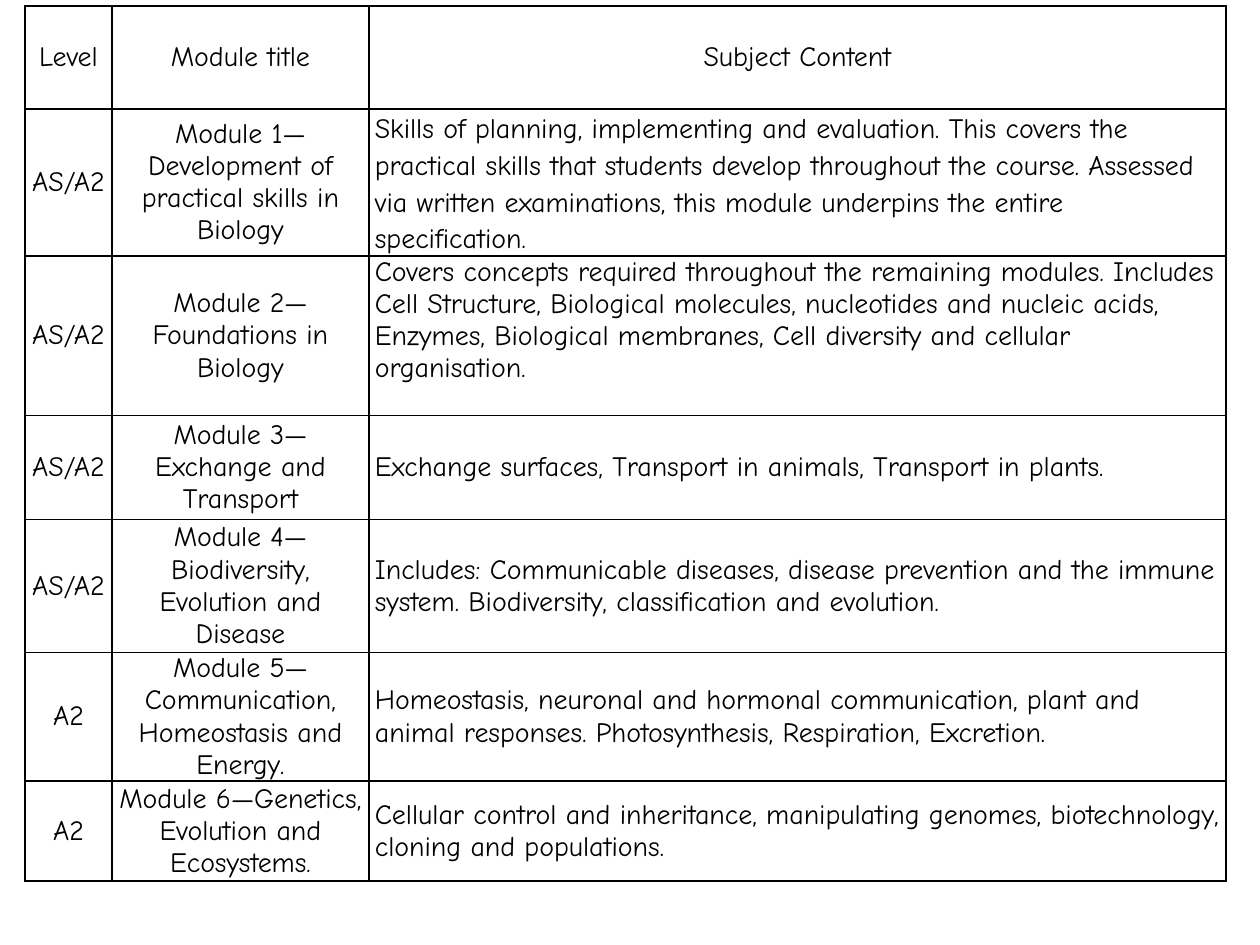
from dataclasses import dataclass

from lxml import etree
from pptx import Presentation
from pptx import util as u
from pptx.dml.color import RGBColor
from pptx.enum import text
from pptx.oxml import ns

# Content: level, module title, subject content
HEADINGS = ("Level", "Module title", "Subject Content")
MODULES = [
    ("AS/A2", "Module 1—Development of practical skills in Biology",
     "Skills of planning, implementing and evaluation. This covers the practical "
     "skills that students develop throughout the course. Assessed via written "
     "examinations, this module underpins the entire specification."),
    ("AS/A2", "Module 2—Foundations in Biology",
     "Covers concepts required throughout the remaining modules. Includes Cell "
     "Structure, Biological molecules, nucleotides and nucleic acids, Enzymes, "
     "Biological membranes, Cell diversity and cellular organisation."),
    ("AS/A2", "Module 3—Exchange and Transport",
     "Exchange surfaces, Transport in animals, Transport in plants."),
    ("AS/A2", "Module 4—Biodiversity, Evolution and Disease",
     "Includes: Communicable diseases, disease prevention and the immune system. "
     "Biodiversity, classification and evolution."),
    ("A2", "Module 5—Communication, Homeostasis and Energy.",
     "Homeostasis, neuronal and hormonal communication, plant and animal "
     "responses. Photosynthesis, Respiration, Excretion."),
    ("A2", "Module 6—Genetics, Evolution and Ecosystems.",
     "Cellular control and inheritance, manipulating genomes, biotechnology, "
     "cloning and populations."),
]

# Layout in px
PX_PER_INCH = 126
SLIDE_SIZE = (1260, 945)
LEFT, TOP = 25, 6
COLUMN_WIDTHS = (87, 257, 857)
ROW_HEIGHTS = (103, 147, 159, 104, 133, 128, 100)
SIDE_MARGIN = 6
SKILLS_ROW, FOUNDATIONS_ROW = 1, 2
FOUNDATIONS_GAP = 31


@dataclass(frozen=True)
class Theme:
    font: str = "Comic Neue"
    size: int = 16
    ink: str = "000000"
    border: int = 1


THEME = Theme()


def px(length):
    return u.Emu(round(length * u.Inches(1) / PX_PER_INCH))


def draw_borders(cell):
    properties = cell._tc.get_or_add_tcPr()
    for side in ("a:lnL", "a:lnR", "a:lnT", "a:lnB"):
        line = etree.SubElement(properties, ns.qn(side), w=str(u.Pt(THEME.border)))
        fill = etree.SubElement(line, ns.qn("a:solidFill"))
        etree.SubElement(fill, ns.qn("a:srgbClr"), val=THEME.ink)


def fill_cell(cell, words, centred):
    draw_borders(cell)
    cell.fill.background()
    cell.vertical_anchor = text.MSO_ANCHOR.MIDDLE
    cell.margin_left = cell.margin_right = px(SIDE_MARGIN)
    cell.margin_top = cell.margin_bottom = 0
    cell.text = words
    paragraph = cell.text_frame.paragraphs[0]
    paragraph.alignment = text.PP_ALIGN.CENTER if centred else text.PP_ALIGN.LEFT
    paragraph.font.name = THEME.font
    paragraph.font.size = u.Pt(THEME.size)
    paragraph.font.bold = False
    paragraph.font.color.rgb = RGBColor.from_string(THEME.ink)


def main():
    deck = Presentation()
    deck.slide_width, deck.slide_height = map(px, SLIDE_SIZE)
    slide = deck.slides.add_slide(deck.slide_layouts[6])

    # Module table
    rows = [HEADINGS, *MODULES]
    modules = slide.shapes.add_table(
        len(rows), len(HEADINGS), px(LEFT), px(TOP),
        px(sum(COLUMN_WIDTHS)), px(sum(ROW_HEIGHTS))).table
    modules.first_row = modules.horz_banding = False
    for column, width in zip(modules.columns, COLUMN_WIDTHS):
        column.width = px(width)
    for row, height in zip(modules.rows, ROW_HEIGHTS):
        row.height = px(height)
    for r, row in enumerate(rows):
        for c, words in enumerate(row):
            fill_cell(modules.cell(r, c), words, centred=r == 0 or c < 2)

    # Looser lines for the skills, and a gap below the foundations
    skills = modules.cell(SKILLS_ROW, 2).text_frame.paragraphs[0]
    skills.line_spacing = 1.14
    skills.space_after = u.Pt(10)
    modules.cell(FOUNDATIONS_ROW, 2).margin_bottom = px(FOUNDATIONS_GAP)

    deck.save("out.pptx")


if __name__ == "__main__":
    main()
